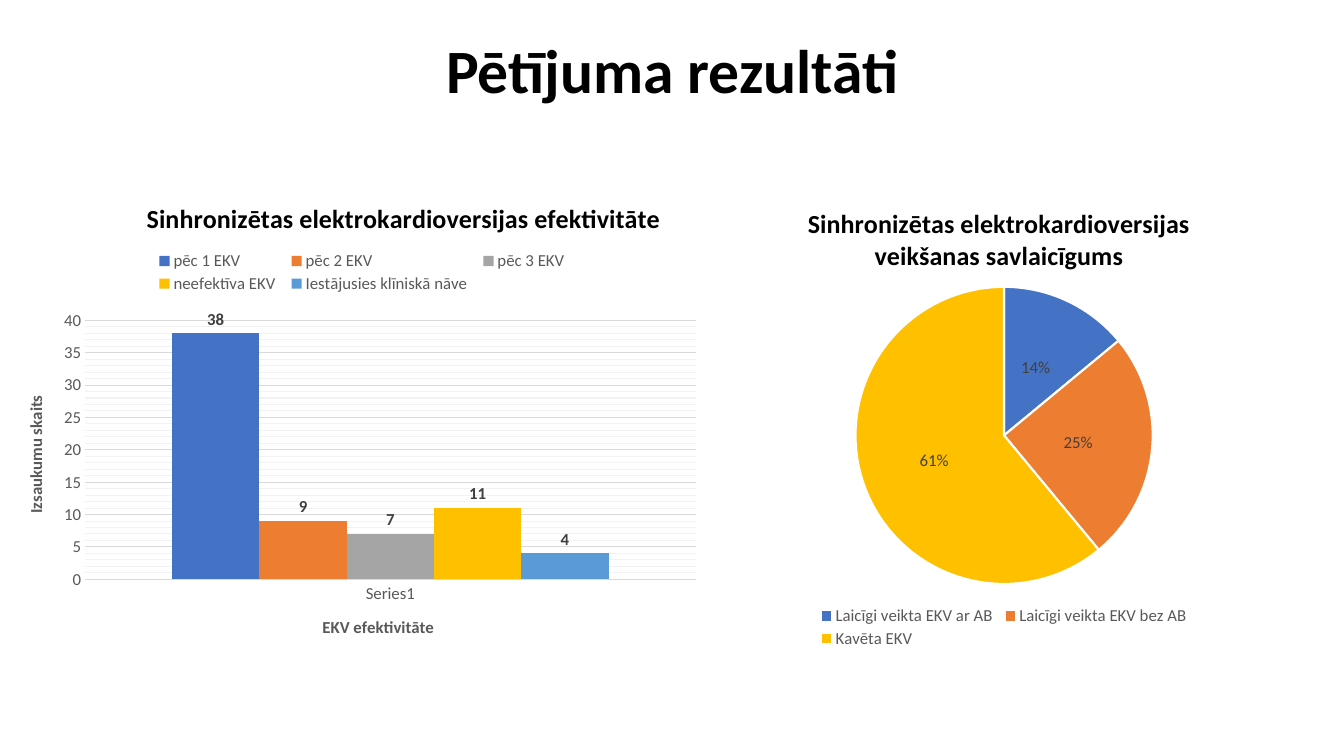
import pptx
import pptx.chart.data
import pptx.dml.color
import pptx.enum.chart
import pptx.enum.text
import pptx.oxml
import pptx.oxml.ns
import pptx.util
from dataclasses import dataclass
from pptx.util import Inches


@dataclass(frozen=True)
class Theme:
    font: str = "Calibri"
    black: str = "000000"
    white: str = "FFFFFF"
    muted: str = "595959"
    label: str = "404040"
    grid: str = "D9D9D9"
    minor_grid: str = "F2F2F2"
    blue: str = "4472C4"
    orange: str = "ED7D31"
    gray: str = "A5A5A5"
    gold: str = "FFC000"
    sky: str = "5B9BD5"
    title_size: float = 44
    chart_title_size: float = 18.6
    text_size: float = 12
    base_size: float = 10


THEME = Theme()
LEGEND = pptx.enum.chart.XL_LEGEND_POSITION
LABEL = pptx.enum.chart.XL_LABEL_POSITION
TICK = pptx.enum.chart.XL_TICK_MARK
CHART_TYPE = pptx.enum.chart.XL_CHART_TYPE

EFFECTIVENESS = [
    ("pēc 1 EKV", 38, THEME.blue),
    ("pēc 2 EKV", 9, THEME.orange),
    ("pēc 3 EKV", 7, THEME.gray),
    ("neefektīva EKV", 11, THEME.gold),
    ("Iestājusies klīniskā nāve", 4, THEME.sky),
]
TIMELINESS = [
    ("Laicīgi veikta EKV ar AB", 14, THEME.blue),
    ("Laicīgi veikta EKV bez AB", 25, THEME.orange),
    ("Kavēta EKV", 61, THEME.gold),
]


def rgb(color):
    return pptx.dml.color.RGBColor.from_string(color)


def style_font(font, size, color, bold=False):
    font.name = THEME.font
    font.size = pptx.util.Pt(size)
    font.bold = bold
    font.color.rgb = rgb(color)


def style_line(line, color, width=0.75):
    line.color.rgb = rgb(color)
    line.width = pptx.util.Pt(width)


def fill_solid(chart_format, color):
    chart_format.fill.solid()
    chart_format.fill.fore_color.rgb = rgb(color)


def write(frame, text, size, color):
    para = frame.paragraphs[0]
    span = para.add_run()
    span.text = text
    style_font(span.font, size, color, bold=True)
    return para


def place(chart, part, left, top, width=None, height=None):
    """Fix a chart part by fractions of the chart's width and height."""
    element = chart.element.xpath(part)[0]
    for old in element.xpath("c:layout"):
        element.remove(old)
    is_plot = part.endswith("plotArea")
    target = '<c:layoutTarget val="inner"/>' if is_plot else ""
    values = {"x": left, "y": top, "w": width, "h": height}
    modes = '<c:xMode val="edge"/><c:yMode val="edge"/>'
    sizes = "".join(f'<c:{key} val="{value}"/>'
                    for key, value in values.items() if value is not None)
    layout = pptx.oxml.parse_xml(
        f'<c:layout {pptx.oxml.ns.nsdecls("c")}><c:manualLayout>'
        f"{target}{modes}{sizes}</c:manualLayout></c:layout>")
    # The layout leads a plot area, and follows the text or position elsewhere
    element.insert(0 if is_plot else 1, layout)


def add_minor_gridlines(chart, color):
    chart.value_axis.has_minor_gridlines = True
    gridlines = chart.element.xpath(".//c:valAx/c:minorGridlines")[0]
    gridlines.append(pptx.oxml.parse_xml(
        f'<c:spPr {pptx.oxml.ns.nsdecls("c", "a")}><a:ln w="9525"><a:solidFill>'
        f'<a:srgbClr val="{color}"/></a:solidFill></a:ln></c:spPr>'))


def add_title(page, text):
    box = page.shapes.add_textbox(Inches(0.92), Inches(0), Inches(11.5), Inches(1.45))
    frame = box.text_frame
    frame.word_wrap = True
    frame.vertical_anchor = pptx.enum.text.MSO_ANCHOR.MIDDLE
    para = write(frame, text, THEME.title_size, THEME.black)
    para.alignment = pptx.enum.text.PP_ALIGN.CENTER
    para.line_spacing = 0.9


def add_chart(page, kind, left, width, data, title, legend_position):
    frame = page.shapes.add_chart(
        kind, Inches(left), Inches(1.75), Inches(width), Inches(4.76), data)
    chart = frame.chart
    style_font(chart.font, THEME.base_size, THEME.black)
    chart.has_title = True
    write(chart.chart_title.text_frame, title, THEME.chart_title_size, THEME.black)
    chart.has_legend = True
    chart.legend.position = legend_position
    chart.legend.include_in_layout = False
    style_font(chart.legend.font, THEME.text_size, THEME.muted)
    return chart


def style_axis(axis, title):
    axis.major_tick_mark = TICK.NONE
    axis.minor_tick_mark = TICK.NONE
    style_font(axis.tick_labels.font, THEME.text_size, THEME.muted)
    axis.has_title = True
    write(axis.axis_title.text_frame, title, THEME.text_size, THEME.muted)


def style_labels(labels, position, bold=False):
    style_font(labels.font, THEME.text_size, THEME.label, bold)
    labels.position = position


def add_effectiveness_chart(page):
    data = pptx.chart.data.CategoryChartData()
    data.categories = ["Series1"]
    for name, count, _ in EFFECTIVENESS:
        data.add_series(name, [count])
    chart = add_chart(page, CHART_TYPE.COLUMN_CLUSTERED, 0, 7.04, data,
                      "Sinhronizētas elektrokardioversijas efektivitāte", LEGEND.TOP)

    # Columns
    plot = chart.plots[0]
    plot.gap_width = 199
    plot.overlap = 0
    plot.vary_by_categories = False
    for series, (_, _, color) in zip(plot.series, EFFECTIVENESS):
        fill_solid(series.format, color)
        series.data_labels.show_value = True
        style_labels(series.data_labels, LABEL.OUTSIDE_END, bold=True)

    # Axes
    style_axis(chart.category_axis, "EKV efektivitāte")
    style_line(chart.category_axis.format.line, THEME.grid)
    axis = chart.value_axis
    style_axis(axis, "Izsaukumu skaits")
    axis.format.line.fill.background()
    axis.minimum_scale, axis.maximum_scale = 0, 40
    axis.major_unit, axis.minor_unit = 5, 1
    axis.has_major_gridlines = True
    style_line(axis.major_gridlines.format.line, THEME.grid)
    add_minor_gridlines(chart, THEME.minor_grid)

    # Layout
    place(chart, "c:chart/c:title", 0.2, 0.04)
    place(chart, "c:chart/c:legend", 0.21, 0.15, 0.6, 0.1)
    place(chart, "c:chart/c:plotArea", 0.12, 0.3, 0.86, 0.54)
    place(chart, "c:chart/c:plotArea/c:catAx/c:title", 0.45, 0.91)
    place(chart, "c:chart/c:plotArea/c:valAx/c:title", 0.03, 0.45)


def add_timeliness_chart(page):
    data = pptx.chart.data.CategoryChartData()
    data.categories = [name for name, _, _ in TIMELINESS]
    data.add_series("Series 1", [share for _, share, _ in TIMELINESS])
    chart = add_chart(page, CHART_TYPE.PIE, 7.04, 5.78, data,
                      "Sinhronizētas elektrokardioversijas veikšanas savlaicīgums",
                      LEGEND.BOTTOM)

    # Slices
    series = chart.plots[0].series[0]
    for index, (_, _, color) in enumerate(TIMELINESS):
        slice_format = series.points[index].format
        fill_solid(slice_format, color)
        style_line(slice_format.line, THEME.white, 1.5)
    labels = series.data_labels
    labels.show_value = False
    labels.show_percentage = True
    labels.number_format = "0%"
    labels.number_format_is_linked = False
    style_labels(labels, LABEL.CENTER)

    # Layout
    place(chart, "c:chart/c:title", 0.16, 0.05)
    place(chart, "c:chart/c:legend", 0.18, 0.89, 0.65, 0.1)
    place(chart, "c:chart/c:plotArea", 0.25, 0.23, 0.51, 0.62)


def main():
    deck = pptx.Presentation()
    deck.slide_width, deck.slide_height = Inches(13.33), Inches(7.5)
    page = deck.slides.add_slide(deck.slide_layouts[6])
    add_title(page, "Pētījuma rezultāti")
    add_effectiveness_chart(page)
    add_timeliness_chart(page)
    deck.save("out.pptx")


if __name__ == "__main__":
    main()
